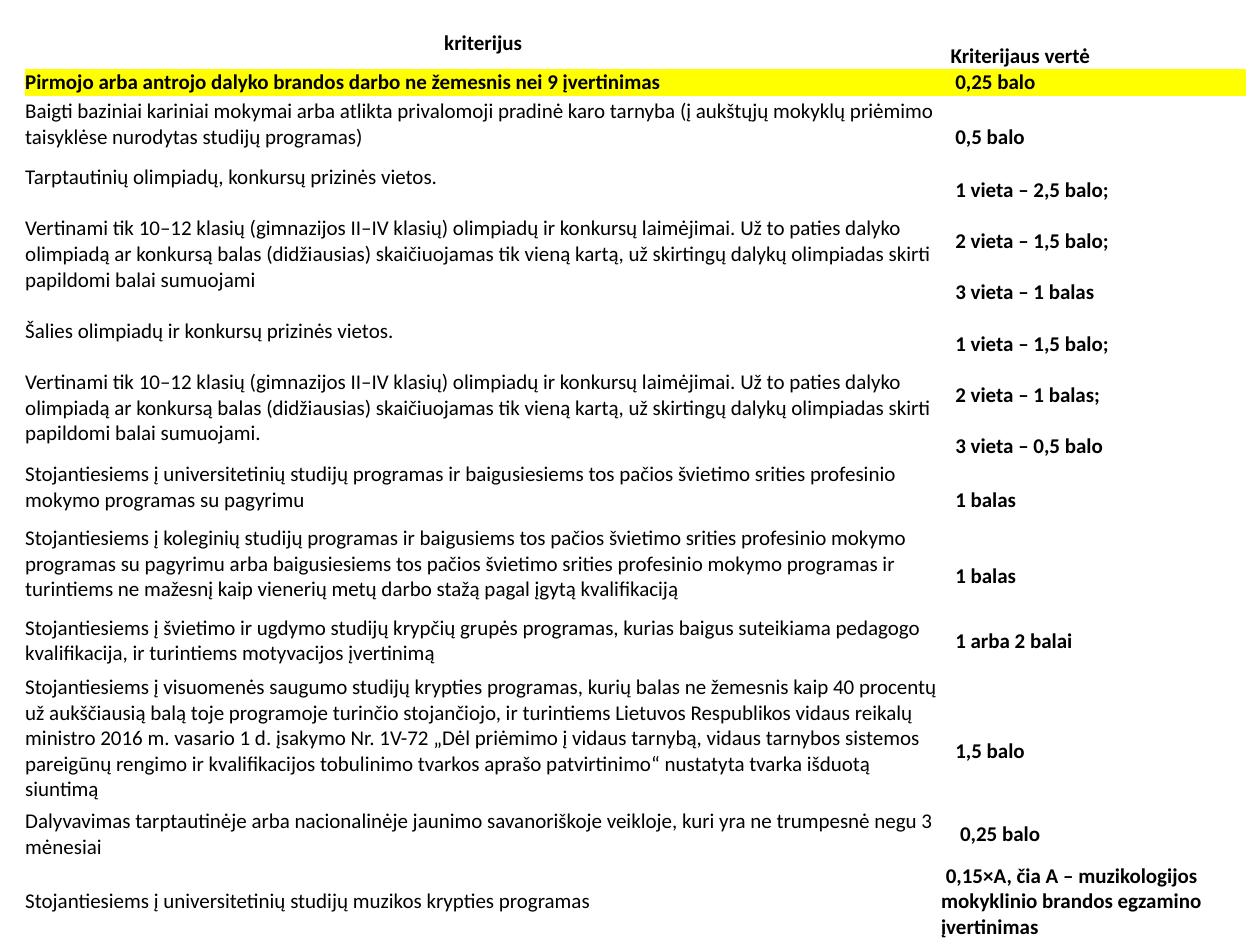
from pptx import Presentation
from pptx.dml.color import RGBColor
from pptx.enum.text import MSO_ANCHOR, PP_ALIGN
from pptx.oxml.ns import qn
from pptx.util import Pt

MIDDLE = MSO_ANCHOR.MIDDLE
CENTER, LEFT = PP_ALIGN.CENTER, PP_ALIGN.LEFT
COLORS = {"text": "000000", "mark": "FFFF00"}
FONT = "Calibri"
SIZE = 12
LINE = 14.65
NO_GRID = "{2D5ABB26-0587-4C30-8999-92F81FD0307C}"
WIDTHS = [523.4, 174.3]
HEAD, MARK = 0, 1

RULE = (
    "Vertinami tik 10–12 klasių (gimnazijos II–IV klasių) olimpiadų ir konkursų "
    "laimėjimai. Už to paties dalyko olimpiadą ar konkursą balas (didžiausias) "
    "skaičiuojamas tik vieną kartą, už skirtingų dalykų olimpiadas skirti "
    "papildomi balai sumuojami"
)

# height, criterion, value, value drop, value indent
ROWS = [
    (29.3, ["kriterijus"], ["Kriterijaus vertė"], LINE, 5.4),
    (15.8, ["Pirmojo arba antrojo dalyko brandos darbo ne žemesnis nei 9 įvertinimas"],
     ["0,25 balo"], 0, 8.1),
    (31.7, ["Baigti baziniai kariniai mokymai arba atlikta privalomoji pradinė karo "
            "tarnyba (į aukštųjų mokyklų priėmimo taisyklėse nurodytas studijų programas)"],
     ["0,5 balo"], LINE, 8.1),
    (87.9, ["Tarptautinių olimpiadų, konkursų prizinės vietos.", RULE],
     ["1 vieta – 2,5 balo;", "2 vieta – 1,5 balo;", "3 vieta – 1 balas"], LINE, 8.1),
    (87.9, ["Šalies olimpiadų ir konkursų prizinės vietos.", RULE + "."],
     ["1 vieta – 1,5 balo;", "2 vieta – 1 balas;", "3 vieta – 0,5 balo"], LINE, 8.1),
    (31.7, ["Stojantiesiems į universitetinių studijų programas ir baigusiesiems tos "
            "pačios švietimo srities profesinio mokymo programas su pagyrimu"],
     ["1 balas"], LINE, 8.1),
    (56.2, ["Stojantiesiems į koleginių studijų programas ir baigusiems tos pačios "
            "švietimo srities profesinio mokymo programas su pagyrimu arba "
            "baigusiesiems tos pačios švietimo srities profesinio mokymo programas ir "
            "turintiems ne mažesnį kaip vienerių metų darbo stažą pagal įgytą "
            "kvalifikaciją"],
     ["1 balas"], LINE, 8.1),
    (31.7, ["Stojantiesiems į švietimo ir ugdymo studijų krypčių grupės programas, "
            "kurias baigus suteikiama pedagogo kvalifikacija, ir turintiems "
            "motyvacijos įvertinimą"],
     ["1 arba 2 balai"], 0, 8.1),
    (79.9, ["Stojantiesiems į visuomenės saugumo studijų krypties programas, kurių "
            "balas ne žemesnis kaip 40 procentų už aukščiausią balą toje programoje "
            "turinčio stojančiojo, ir turintiems Lietuvos Respublikos vidaus reikalų "
            "ministro 2016 m. vasario 1 d. įsakymo Nr. 1V-72 „Dėl priėmimo į vidaus "
            "tarnybą, vidaus tarnybos sistemos pareigūnų rengimo ir kvalifikacijos "
            "tobulinimo tvarkos aprašo patvirtinimo“ nustatyta tvarka išduotą siuntimą"],
     ["1,5 balo"], LINE, 8.1),
    (29.3, ["Dalyvavimas tarptautinėje arba nacionalinėje jaunimo savanoriškoje "
            "veikloje, kuri yra ne trumpesnė negu 3 mėnesiai"],
     ["0,25 balo"], 0, 10.8),
    (48.2, ["Stojantiesiems į universitetinių studijų muzikos krypties programas"],
     ["0,15×A, čia A – muzikologijos mokyklinio brandos egzamino įvertinimas"], 0, 0),
]


def fill_cell(cell, lines, bold, mark, align=LEFT, drop=0, indent=0):
    cell.vertical_anchor = MIDDLE
    cell.margin_left, cell.margin_top = Pt(indent), Pt(drop)
    cell.margin_right = cell.margin_bottom = 0
    if mark:
        cell.fill.solid()
        cell.fill.fore_color.rgb = RGBColor.from_string(COLORS["mark"])
    else:
        cell.fill.background()
    frame = cell.text_frame
    frame.text = "\n".join(lines)
    for num, para in enumerate(frame.paragraphs):
        para.alignment = align
        if num:
            para.space_before = Pt(LINE)
        for run in para.runs:
            font = run.font
            font.name, font.size, font.bold = FONT, Pt(SIZE), bold
            font.color.rgb = RGBColor.from_string(COLORS["text"])


def add_scores(slide, left, top, width, height):
    table = slide.shapes.add_table(
        len(ROWS), len(WIDTHS), Pt(left), Pt(top), Pt(width), Pt(height)).table
    table.first_row = table.horz_banding = False
    table._tbl.tblPr.find(qn("a:tableStyleId")).text = NO_GRID
    for col, size in zip(table.columns, WIDTHS):
        col.width = Pt(size)
    for num, (tall, goal, value, drop, indent) in enumerate(ROWS):
        table.rows[num].height = Pt(tall)
        mark = num == MARK
        align = CENTER if num == HEAD else LEFT
        fill_cell(table.cell(num, 0), goal, num <= MARK, mark, align)
        fill_cell(table.cell(num, 1), value, True, mark, LEFT, drop, indent)
    last = table.cell(len(ROWS) - 1, 1).text_frame.paragraphs[0]
    last._p.get_or_add_pPr().set("indent", str(Pt(2.7)))


def main():
    deck = Presentation()
    deck.slide_width, deck.slide_height = Pt(720), Pt(540)
    slide = deck.slides.add_slide(deck.slide_layouts[6])
    add_scores(slide, 14.4, 10, sum(WIDTHS), sum(row[0] for row in ROWS))
    deck.save("out.pptx")


if __name__ == "__main__":
    main()
